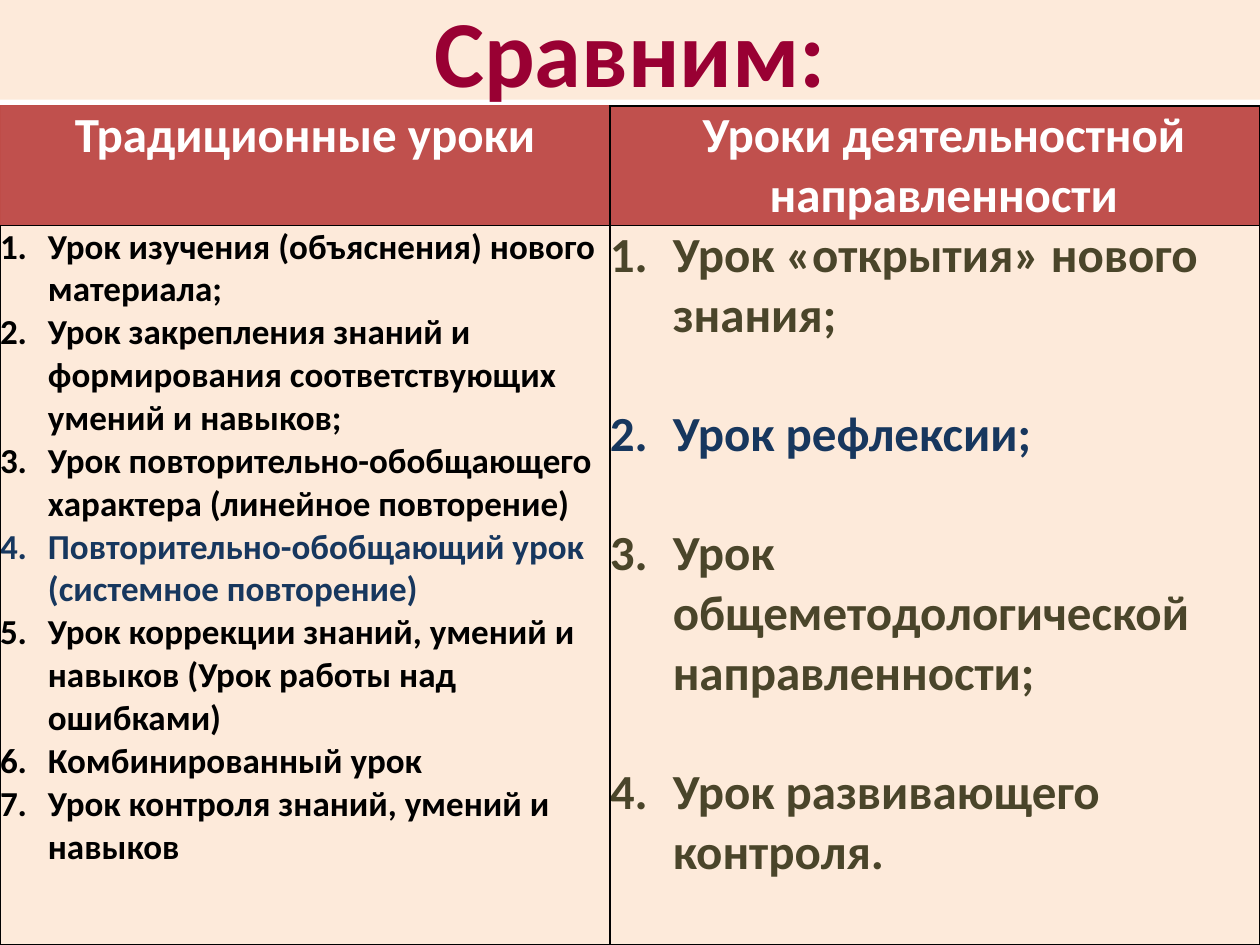
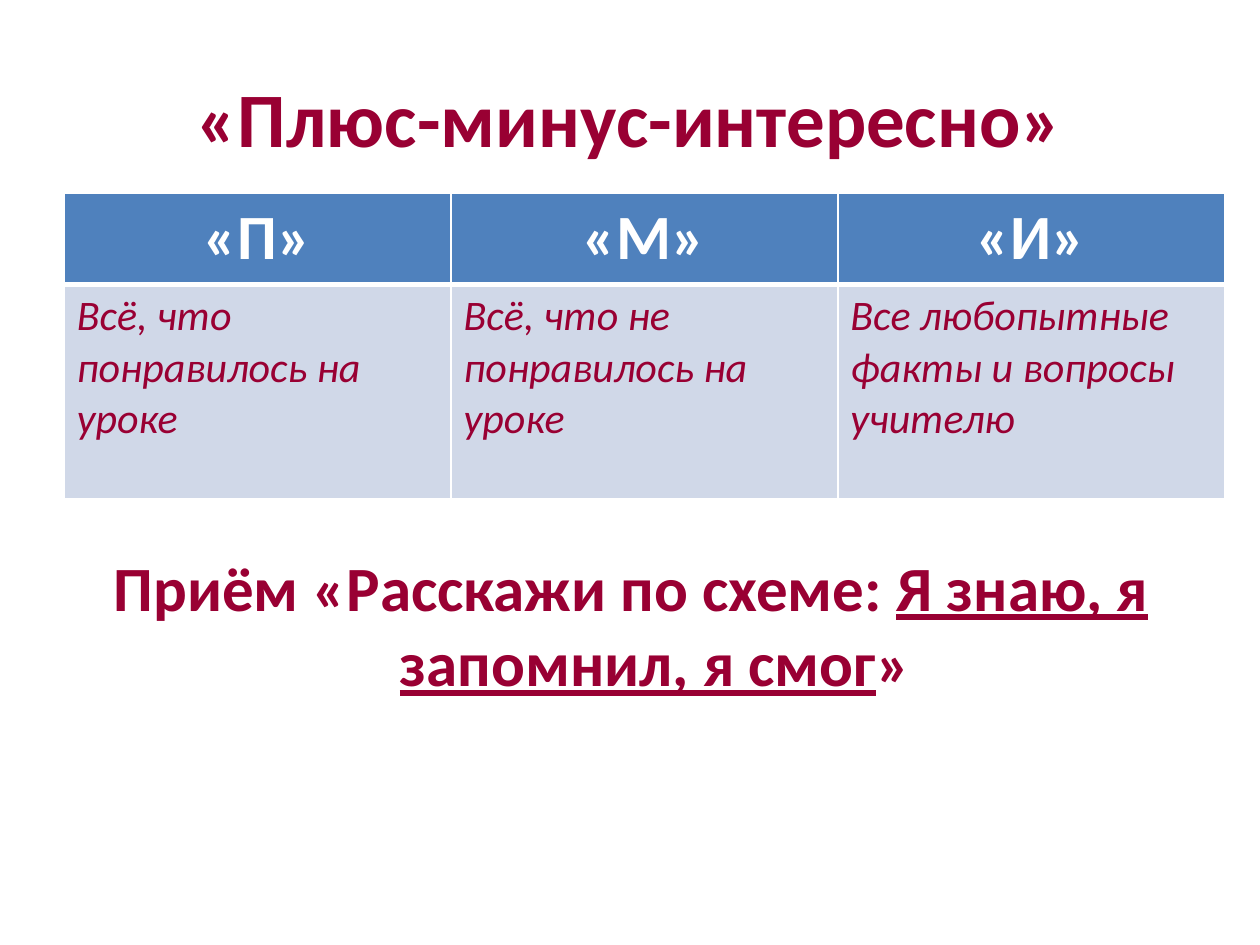
from dataclasses import dataclass
from typing import Optional

from lxml import etree
from pptx import Presentation
from pptx import util as u
from pptx.dml.color import RGBColor
from pptx.enum import text as t
from pptx.oxml import ns

FONT = "Calibri"
HEX = {
    "wine": "990033", "peach": "FDEADA", "brick": "C0504D", "rust": "BF4C48",
    "navy": "17375E", "olive": "4A452A", "blue": "4F81BD", "pale": "D0D8E8",
    "white": "FFFFFF", "black": "000000",
}
MID = t.PP_ALIGN.CENTER
LEFT = t.PP_ALIGN.LEFT


@dataclass
class Style:
    size: int
    hue: str
    bold: bool = True
    slant: bool = False
    align: t.PP_ALIGN = LEFT


@dataclass
class Item:
    words: str
    hue: Optional[str] = None


@dataclass
class Frame:
    left: float
    top: float
    width: float
    height: float

    def box(self) -> tuple:
        return tuple(u.Inches(n) for n in (self.left, self.top, self.width, self.height))


def rgb(hue: str) -> RGBColor:
    return RGBColor.from_string(HEX[hue])


def add_run(para, words: str, style: Style, hue: Optional[str] = None, under: bool = False) -> None:
    run = para.add_run()
    run.text = words
    font = run.font
    font.name, font.size = FONT, u.Pt(style.size)
    font.bold, font.italic, font.underline = style.bold, style.slant, under
    font.color.rgb = rgb(hue or style.hue)


def indent(para, left: float, first: float = 0, mark: Optional[str] = None, **attrs: str) -> None:
    """Set the margins and, if asked, the bullet element of a paragraph."""
    props = para._p.get_or_add_pPr()
    props.set("marL", str(u.Inches(left)))
    props.set("indent", str(u.Inches(first)))
    if mark:
        etree.SubElement(props, ns.qn(mark), attrs)


def place(shape, frame: Frame) -> None:
    shape.left, shape.top, shape.width, shape.height = frame.box()


def add_title(slide, words: str, size: int, frame: Frame, fill: Optional[str] = None) -> None:
    title = slide.shapes.title
    place(title, frame)
    if fill:
        title.fill.solid()
        title.fill.fore_color.rgb = rgb(fill)
    body = title.text_frame
    body.auto_size = t.MSO_AUTO_SIZE.NONE
    body.vertical_anchor = t.MSO_ANCHOR.MIDDLE
    para = body.paragraphs[0]
    para.alignment = MID
    add_run(para, words, Style(size, "wine"))


def add_grid(slide, frame: Frame, cols: list[float], rows: list[float]):
    grid = slide.shapes.add_table(len(rows), len(cols), *frame.box()).table
    for col, width in zip(grid.columns, cols):
        col.width = u.Inches(width)
    for row, height in zip(grid.rows, rows):
        row.height = u.Inches(height)
    return grid


def dress(cell, fill: str, edge: str, pad: Optional[float] = None, **edges: tuple) -> None:
    """Fill a cell and line its sides; edges holds (hue, points) by side."""
    props = cell._tc.get_or_add_tcPr()
    for side in "LRTB":
        hue, points = edges.get(side, (edge, 1))
        line = etree.SubElement(props, ns.qn(f"a:ln{side}"), w=str(u.Pt(points)))
        solid = etree.SubElement(line, ns.qn("a:solidFill"))
        etree.SubElement(solid, ns.qn("a:srgbClr"), val=HEX[hue])
    cell.fill.solid()
    cell.fill.fore_color.rgb = rgb(fill)
    if pad is not None:
        cell.margin_left = cell.margin_right = u.Inches(pad)
        cell.margin_top = cell.margin_bottom = u.Inches(pad)


def write(cell, words: str, style: Style):
    para = cell.text_frame.paragraphs[0]
    para.alignment = style.align
    add_run(para, words, style)
    return para


def write_list(cell, items: list[Item], style: Style, hang: float, gap: int = 0) -> None:
    body = cell.text_frame
    for i, item in enumerate(items):
        para = body.add_paragraph() if i else body.paragraphs[0]
        indent(para, hang, -hang, "a:buAutoNum", type="arabicPeriod")
        para.space_before = u.Pt(gap if i else 0)
        add_run(para, item.words, style, item.hue)


def compare(deck) -> None:
    slide = deck.slides.add_slide(deck.slide_layouts[5])
    add_title(slide, "Сравним:", 54, Frame(0, 0, 10, 0.79), "peach")
    grid = add_grid(slide, Frame(0, 0.84, 10, 6.66), [4.84, 5.16], [0.95, 5.71])

    head = Style(28, "white", align=MID)
    rust = ("rust", 0.75)
    dress(grid.cell(0, 0), "brick", "black", 0, L=rust, T=rust)
    dress(grid.cell(0, 1), "brick", "black", 0)
    write(grid.cell(0, 0), "Традиционные уроки", head)
    indent(write(grid.cell(0, 1), "Уроки деятельностной направленности", head), 0.14)

    usual = [
        Item("Урок изучения (объяснения) нового материала;"),
        Item("Урок закрепления знаний и формирования соответствующих умений и навыков;"),
        Item("Урок повторительно-обобщающего характера (линейное повторение)"),
        Item("Повторительно-обобщающий урок (системное повторение)", "navy"),
        Item("Урок коррекции знаний, умений и навыков (Урок работы над ошибками)"),
        Item("Комбинированный урок"),
        Item("Урок контроля знаний, умений и навыков"),
    ]
    active = [
        Item("Урок «открытия» нового знания;"),
        Item("Урок рефлексии;", "navy"),
        Item("Урок общеметодологической направленности;"),
        Item("Урок развивающего контроля."),
    ]
    for col in range(2):
        dress(grid.cell(1, col), "peach", "black", 0)
    write_list(grid.cell(1, 0), usual, Style(20, "black"), 0.38)
    write_list(grid.cell(1, 1), active, Style(28, "olive"), 0.5, gap=34)


def reflect(deck) -> None:
    slide = deck.slides.add_slide(deck.slide_layouts[1])
    add_title(slide, "«Плюс-минус-интересно»", 44, Frame(0.5, 0.3, 9, 1.25))

    body = slide.placeholders[1]
    place(body, Frame(0.51, 4.3, 9, 1.26))
    body.text_frame.auto_size = t.MSO_AUTO_SIZE.NONE
    para = body.text_frame.paragraphs[0]
    indent(para, 0.38, -0.38, "a:buNone")
    para.alignment = MID
    para.space_before = u.Pt(0)
    style = Style(36, "wine")
    add_run(para, "Приём «Расскажи по схеме: ", style)
    add_run(para, "Я знаю, я запомнил, я смог", style, under=True)
    add_run(para, "»", style)

    notes = {
        "«П»": "Всё, что понравилось на уроке",
        "«М»": "Всё, что не понравилось на уроке",
        "«И»": "Все любопытные факты и вопросы учителю",
    }
    grid = add_grid(slide, Frame(0.51, 1.53, 9.21, 2.43), [3.07] * 3, [0.73, 1.7])
    thick = ("white", 3)
    for col, (mark, note) in enumerate(notes.items()):
        top, low = grid.cell(0, col), grid.cell(1, col)
        dress(top, "blue", "white", B=thick)
        dress(low, "pale", "white", T=thick)
        write(top, mark, Style(36, "white", align=MID))
        write(low, note, Style(24, "wine", bold=False, slant=True))


def main() -> None:
    deck = Presentation()
    deck.slide_width, deck.slide_height = u.Inches(10), u.Inches(7.5)
    compare(deck)
    reflect(deck)
    deck.save("out.pptx")


if __name__ == "__main__":
    main()
